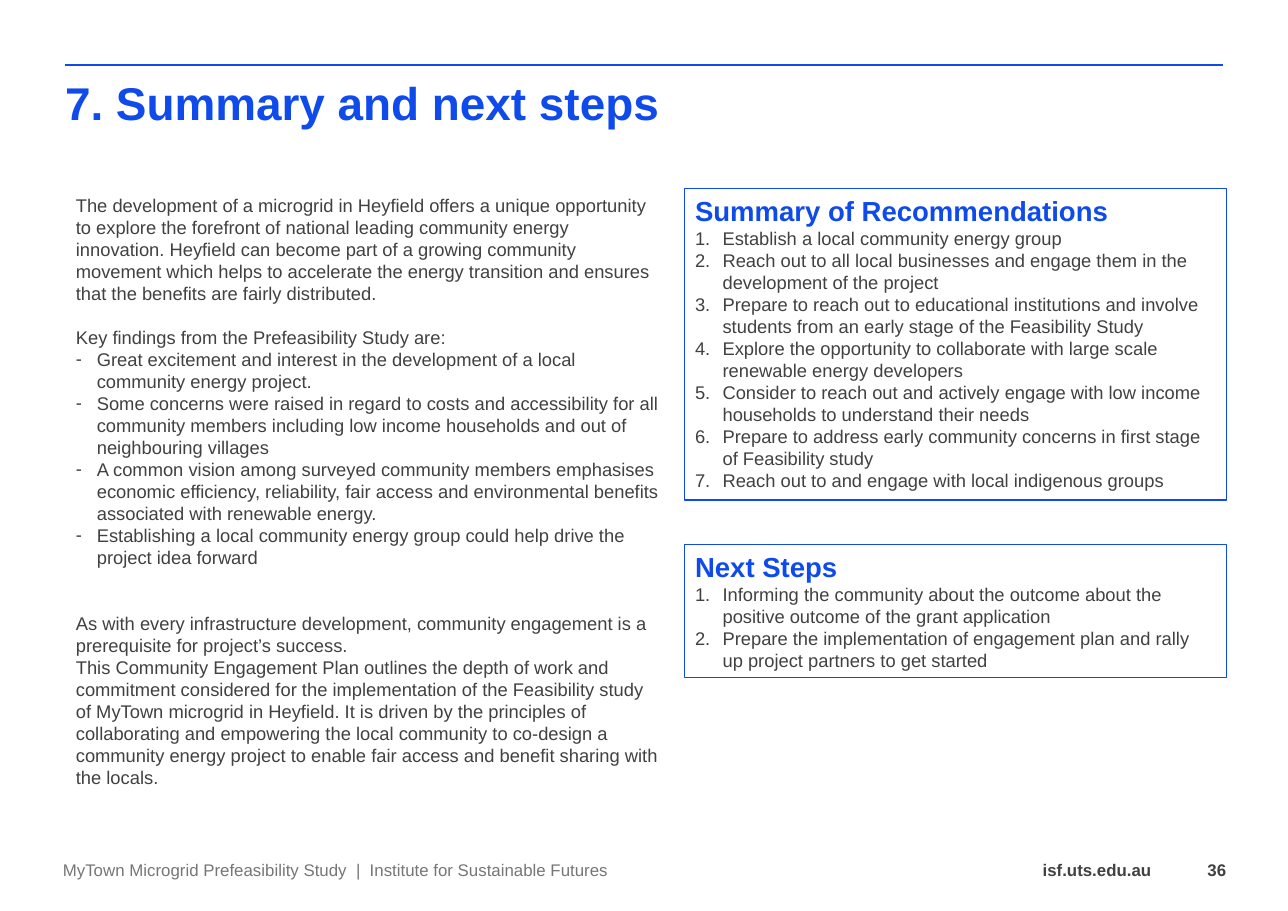
from dataclasses import dataclass

import pptx
import pptx.dml.color
import pptx.enum.shapes
import pptx.enum.text
import pptx.oxml.ns
import pptx.util
from lxml import etree

PX = pptx.util.Inches(1) // 100
BLUE = pptx.dml.color.RGBColor(0x0F, 0x4B, 0xEB)
DARK = pptx.dml.color.RGBColor(0x41, 0x40, 0x42)
GREY = pptx.dml.color.RGBColor(0x76, 0x76, 0x76)
FONT = "Arial"
LINE_PITCH = 14.4

ALIGN = pptx.enum.text.PP_ALIGN
ANCHOR = pptx.enum.text.MSO_ANCHOR
qn = pptx.oxml.ns.qn


@dataclass(frozen=True)
class Area:
    left: int
    top: int
    width: int
    height: int

    def emu(self) -> tuple[int, ...]:
        return tuple(PX * n for n in (self.left, self.top, self.width, self.height))


@dataclass(frozen=True)
class Style:
    size: int
    color: pptx.dml.color.RGBColor
    bold: bool = False


@dataclass(frozen=True)
class Label:
    area: Area
    text: str
    style: Style
    align: ALIGN = ALIGN.LEFT
    anchor: ANCHOR = ANCHOR.MIDDLE
    margin: int = 0
    spacing: float = 1.0


@dataclass(frozen=True)
class Item:
    text: str
    bullet: str = ""
    blank_lines: int = 0


@dataclass(frozen=True)
class Panel:
    area: Area
    heading: str
    steps: tuple[str, ...]


BODY = Style(12, DARK)
HEADING = Style(18, BLUE, True)
FOOTER = Style(11, DARK, True)
INDENTS = {"-": 19, "1.": 25}

LABELS = (
    Label(Area(849, 774, 206, 31), "isf.uts.edu.au", FOOTER, ALIGN.RIGHT, margin=10),
    Label(Area(59, 73, 1051, 55), "7. Summary and next steps", Style(30, BLUE, True),
          anchor=ANCHOR.TOP, spacing=0.9),
    Label(Area(1066, 774, 47, 31), "36", FOOTER, ALIGN.RIGHT),
    Label(Area(57, 774, 528, 31),
          "MyTown Microgrid Prefeasibility Study  |  Institute for Sustainable Futures",
          Style(11, GREY)),
)

FINDINGS_AREA = Area(59, 171, 551, 616)
FINDINGS = (
    Item("The development of a microgrid in Heyfield offers a unique opportunity to explore "
         "the forefront of national leading community energy innovation. Heyfield can become "
         "part of a growing community movement which helps to accelerate the energy "
         "transition and ensures that the benefits are fairly distributed."),
    Item("Key findings from the Prefeasibility Study are:", blank_lines=1),
    Item("Great excitement and interest in the development of a local community energy "
         "project.", "-"),
    Item("Some concerns were raised in regard to costs and accessibility for all community "
         "members including low income households and out of neighbouring villages", "-"),
    Item("A common vision among surveyed community members emphasises economic efficiency, "
         "reliability, fair access and environmental benefits associated with renewable "
         "energy.", "-"),
    Item("Establishing a local community energy group could help drive the project idea "
         "forward", "-"),
    Item("As with every infrastructure development, community engagement is a prerequisite "
         "for project’s success.", blank_lines=2),
    Item("This Community Engagement Plan outlines the depth of work and commitment considered "
         "for the implementation of the Feasibility study of MyTown microgrid in Heyfield. It "
         "is driven by the principles of collaborating and empowering the local community to "
         "co-design a community energy project to enable fair access and benefit sharing with "
         "the locals."),
)

PANELS = (
    Panel(Area(621, 171, 492, 283), "Summary of Recommendations", (
        "Establish a local community energy group",
        "Reach out to all local businesses and engage them in the development of the project",
        "Prepare to reach out to educational institutions and involve students from an early "
        "stage of the Feasibility Study",
        "Explore the opportunity to collaborate with large scale renewable energy developers",
        "Consider to reach out and actively engage with low income households to understand "
        "their needs",
        "Prepare to address early community concerns in first stage of Feasibility study",
        "Reach out to and engage with local indigenous groups",
    )),
    Panel(Area(621, 494, 492, 121), "Next Steps", (
        "Informing the community about the outcome about the positive outcome of the grant "
        "application",
        "Prepare the implementation of engagement plan and rally up project partners to get "
        "started",
    )),
)


def write(para, text: str, style: Style, align: ALIGN = ALIGN.LEFT) -> None:
    para.text = text
    para.alignment = align
    for span in para.runs:
        span.font.name = FONT
        span.font.size = pptx.util.Pt(style.size)
        span.font.bold = style.bold
        span.font.color.rgb = style.color


def add_bullet(para, bullet: str) -> None:
    """Give the paragraph a hanging dash, or an automatic number for "1."."""
    properties = para._p.get_or_add_pPr()
    indent = INDENTS[bullet] * PX
    properties.set("marL", str(indent))
    properties.set("indent", str(-indent))
    if bullet == "1.":
        etree.SubElement(properties, qn("a:buAutoNum"), type="arabicPeriod")
    else:
        etree.SubElement(properties, qn("a:buFont"), typeface=FONT)
        etree.SubElement(properties, qn("a:buChar"), char=bullet)


def write_item(para, item: Item) -> None:
    if item.bullet:
        add_bullet(para, item.bullet)
    write(para, item.text, BODY)
    para.line_spacing = pptx.util.Pt(LINE_PITCH)
    if item.blank_lines:
        para.space_before = pptx.util.Pt(LINE_PITCH * item.blank_lines)


def draw_rule(slide) -> None:
    rule = slide.shapes.add_connector(
        pptx.enum.shapes.MSO_CONNECTOR.STRAIGHT, 59 * PX, 59 * PX, 1110 * PX, 59 * PX)
    rule.line.color.rgb = BLUE
    rule.line.width = pptx.util.Pt(1.5)
    etree.SubElement(rule._element.spPr, qn("a:effectLst"))


def draw_label(slide, label: Label) -> None:
    frame = slide.shapes.add_textbox(*label.area.emu()).text_frame
    frame.word_wrap = True
    frame.vertical_anchor = label.anchor
    frame.margin_left = frame.margin_right = label.margin * PX
    frame.margin_top = frame.margin_bottom = 0
    para = frame.paragraphs[0]
    write(para, label.text, label.style, label.align)
    para.line_spacing = label.spacing


def draw_findings(slide) -> None:
    frame = slide.shapes.add_textbox(*FINDINGS_AREA.emu()).text_frame
    frame.word_wrap = True
    for index, item in enumerate(FINDINGS):
        write_item(frame.add_paragraph() if index else frame.paragraphs[0], item)


def draw_panel(slide, panel: Panel) -> None:
    box = slide.shapes.add_shape(
        pptx.enum.shapes.MSO_SHAPE.RECTANGLE, *panel.area.emu())
    box.shadow.inherit = False
    box.fill.background()
    box.line.color.rgb = BLUE
    box.line.width = pptx.util.Pt(0.75)
    frame = box.text_frame
    frame.word_wrap = True
    frame.vertical_anchor = ANCHOR.TOP
    write(frame.paragraphs[0], panel.heading, HEADING)
    for step in panel.steps:
        write_item(frame.add_paragraph(), Item(step, "1."))


def main() -> None:
    deck = pptx.Presentation()
    deck.slide_width, deck.slide_height = 1169 * PX, 827 * PX
    page = deck.slides.add_slide(deck.slide_layouts[6])
    draw_rule(page)
    for label in LABELS:
        draw_label(page, label)
    draw_findings(page)
    for panel in PANELS:
        draw_panel(page, panel)
    deck.save("out.pptx")


if __name__ == "__main__":
    main()
